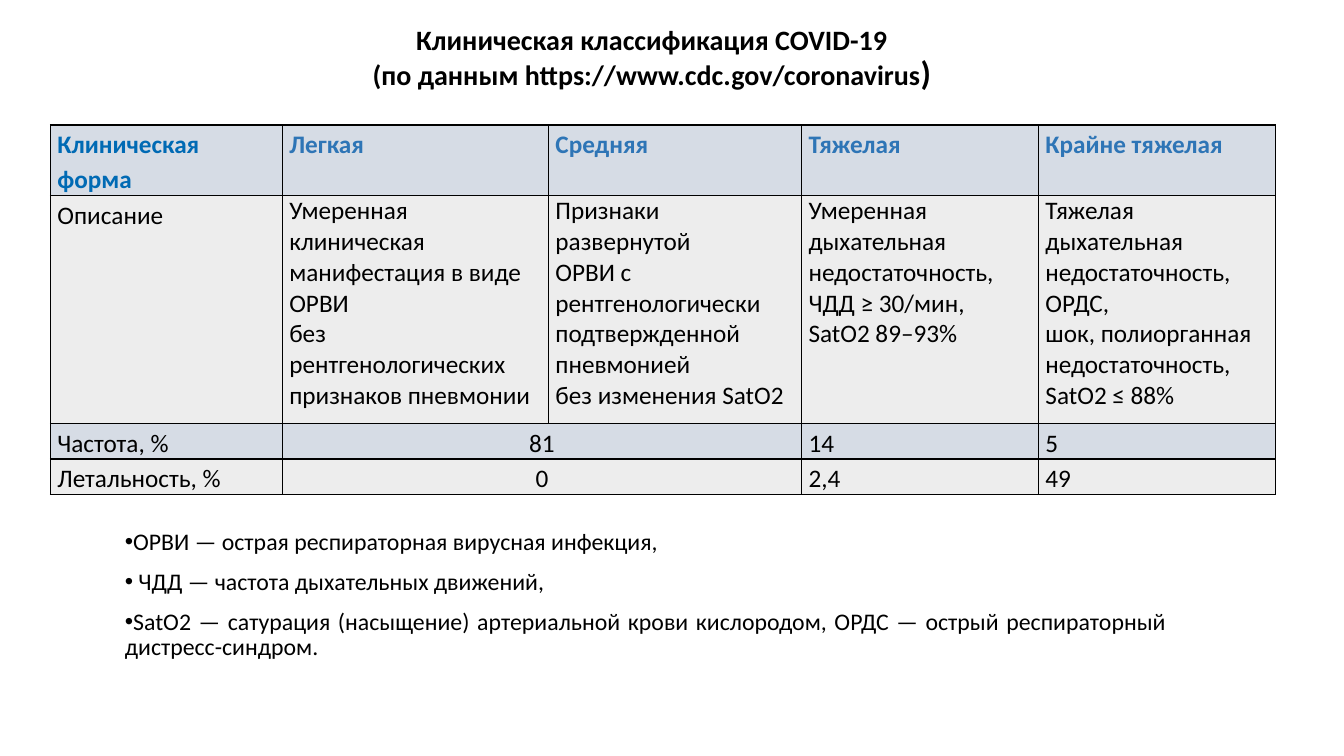
from lxml.etree import SubElement
from pptx import Presentation
from pptx.dml.color import RGBColor
from pptx.enum.text import MSO_ANCHOR, MSO_AUTO_SIZE, PP_ALIGN
from pptx.oxml.ns import qn
from pptx.util import Inches, Pt

FONT = "Calibri"
BLACK, BLUE, DEEP_BLUE = "000000", "2E75B6", "006AB4"
BAND_FILLS = ["D6DCE5", "EDEDED"]

TITLE = "Клиническая классификация COVID-19\v(по данным https://www.cdc.gov/coronavirus"
COL_WIDTHS = [2.3, 2.64, 2.51, 2.35, 2.35]
ROW_HEIGHTS = [0.68, 2.26, 0.33, 0.33]
DESCRIPTION_ROW = 1
# None marks a cell merged into the one on its left
ROWS = [
    ["Клиническая форма", "Легкая", "Средняя", "Тяжелая", "Крайне тяжелая"],
    ["Описание",
     "Умеренная клиническая\nманифестация в виде ОРВИ\nбез рентгенологических\nпризнаков пневмонии",
     "Признаки развернутой\nОРВИ с рентгенологически\nподтвержденной\nпневмонией\nбез изменения SatO2",
     "Умеренная\nдыхательная\nнедостаточность,\nЧДД ≥ 30/мин,\nSatO2 89–93%",
     "Тяжелая дыхательная\nнедостаточность, ОРДС,\nшок, полиорганная\nнедостаточность,\nSatO2 ≤ 88%"],
    ["Частота, %", "81", None, "14", "5"],
    ["Летальность, %", "0", None, "2,4", "49"],
]
ABBREVIATIONS = [
    "ОРВИ — острая респираторная вирусная инфекция,",
    " ЧДД — частота дыхательных движений,",
    "SatO2 — сатурация (насыщение) артериальной крови кислородом, "
    "ОРДС — острый респираторный дистресс-синдром.",
]


def rgb(color):
    return RGBColor.from_string(color)


def format_runs(p, size, color=BLACK, bold=False):
    for r in p.runs:
        r.font.name = FONT
        r.font.size = Pt(size)
        r.font.bold = bold
        r.font.color.rgb = rgb(color)


def add_title(s):
    title = s.shapes.title
    title.left, title.top = Inches(0.64), Inches(0.21)
    title.width, title.height = Inches(11.65), Inches(0.77)
    tf = title.text_frame
    tf.auto_size = MSO_AUTO_SIZE.NONE
    tf.vertical_anchor = MSO_ANCHOR.TOP
    p = tf.paragraphs[0]
    p.text = TITLE
    p.alignment = PP_ALIGN.CENTER
    p.line_spacing = 0.9
    closing = p.add_run()
    closing.text = ")"
    format_runs(p, 20, bold=True)
    closing.font.size = Pt(24)


def add_borders(cell):
    tcPr = cell._tc.get_or_add_tcPr()
    for side in ("a:lnL", "a:lnR", "a:lnT", "a:lnB"):
        ln = SubElement(tcPr, qn(side), w=str(Pt(1)))
        fill = SubElement(ln, qn("a:solidFill"))
        SubElement(fill, qn("a:srgbClr"), val=BLACK)


def style_cell(cell, fill):
    add_borders(cell)
    cell.fill.solid()
    cell.fill.fore_color.rgb = rgb(fill)
    cell.margin_left = cell.margin_right = Inches(0.07)
    cell.margin_top = cell.margin_bottom = 0


def fill_cell(cell, text, color, bold, spacing):
    cell.text_frame.text = text
    for p in cell.text_frame.paragraphs:
        p.line_spacing = spacing
        p.alignment = PP_ALIGN.CENTER if cell.is_merge_origin else PP_ALIGN.LEFT
        format_runs(p, 18, color, bold)


def add_forms_table(s):
    table = s.shapes.add_table(
        len(ROWS), len(COL_WIDTHS), Inches(0.5), Inches(1.24),
        Inches(sum(COL_WIDTHS)), Inches(sum(ROW_HEIGHTS))).table
    for col, width in zip(table.columns, COL_WIDTHS):
        col.width = Inches(width)
    for row, height in zip(table.rows, ROW_HEIGHTS):
        row.height = Inches(height)

    for i, texts in enumerate(ROWS):
        for j, text in enumerate(texts):
            cell = table.cell(i, j)
            style_cell(cell, BAND_FILLS[i % 2])
            if text is None:
                continue
            if j + 1 < len(texts) and texts[j + 1] is None:
                cell.merge(table.cell(i, j + 1))
            header = i == 0
            color = (DEEP_BLUE if j == 0 else BLUE) if header else BLACK
            spacing = 1.0 if i == DESCRIPTION_ROW and j > 0 else 1.15
            fill_cell(cell, text, color, header, spacing)


def add_bulleted_text(s, lines):
    box = s.shapes.add_textbox(Inches(1.14), Inches(5.21), Inches(10.53), Inches(1.84))
    tf = box.text_frame
    tf.word_wrap = True
    tf.text = "\n".join(lines)
    for p in tf.paragraphs:
        p.alignment = PP_ALIGN.JUSTIFY
        p.line_spacing = 0.9
        p.space_before = Pt(10)
        pPr = p._p.get_or_add_pPr()
        SubElement(pPr, qn("a:buFont"), typeface="Arial")
        SubElement(pPr, qn("a:buChar"), char="•")
        format_runs(p, 17)


def main():
    prs = Presentation()
    prs.slide_width, prs.slide_height = Inches(13.33), Inches(7.5)
    s = prs.slides.add_slide(prs.slide_layouts[5])  # title only

    # Heading, table of clinical forms, abbreviations
    add_title(s)
    add_forms_table(s)
    add_bulleted_text(s, ABBREVIATIONS)

    prs.save("out.pptx")


if __name__ == "__main__":
    main()
